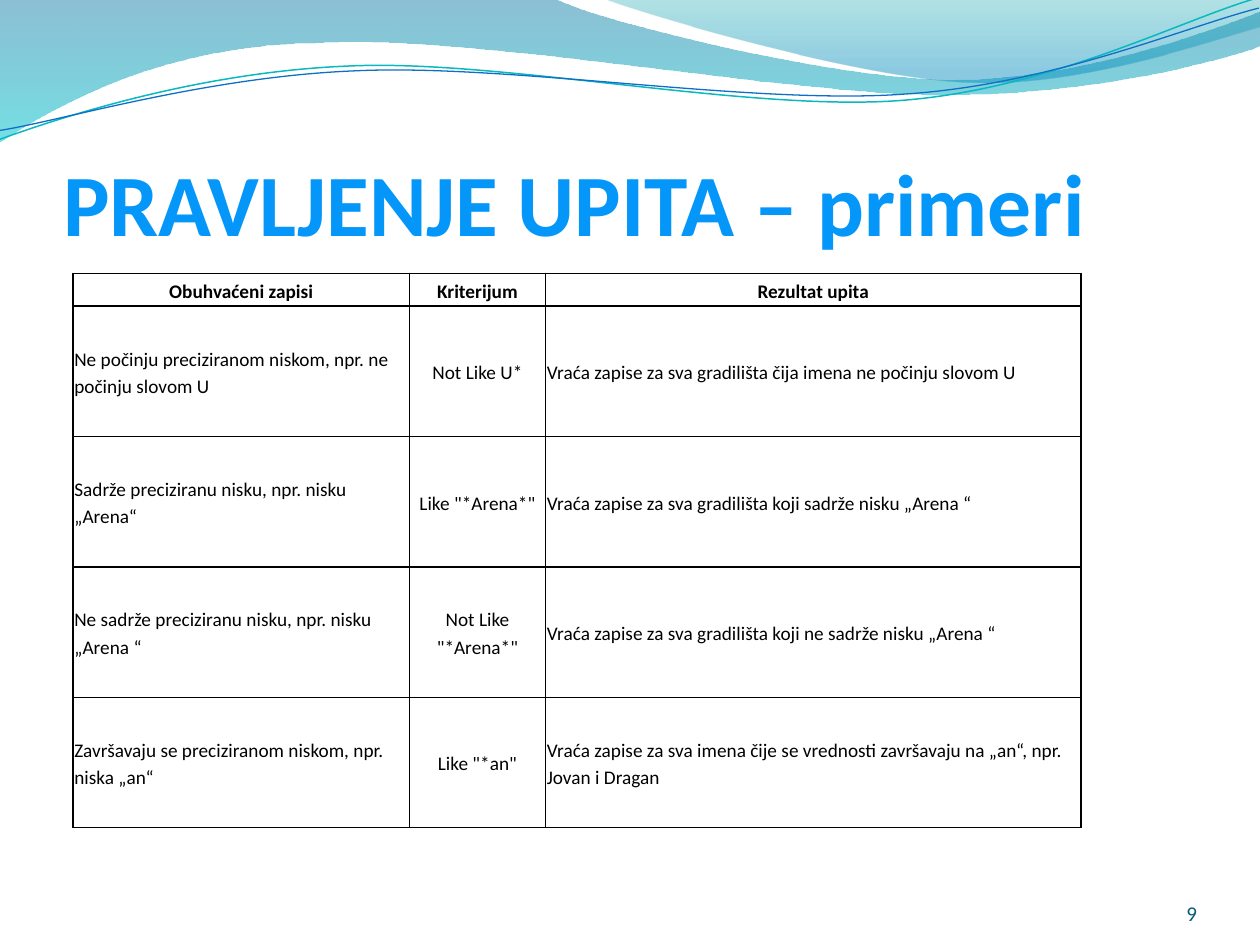
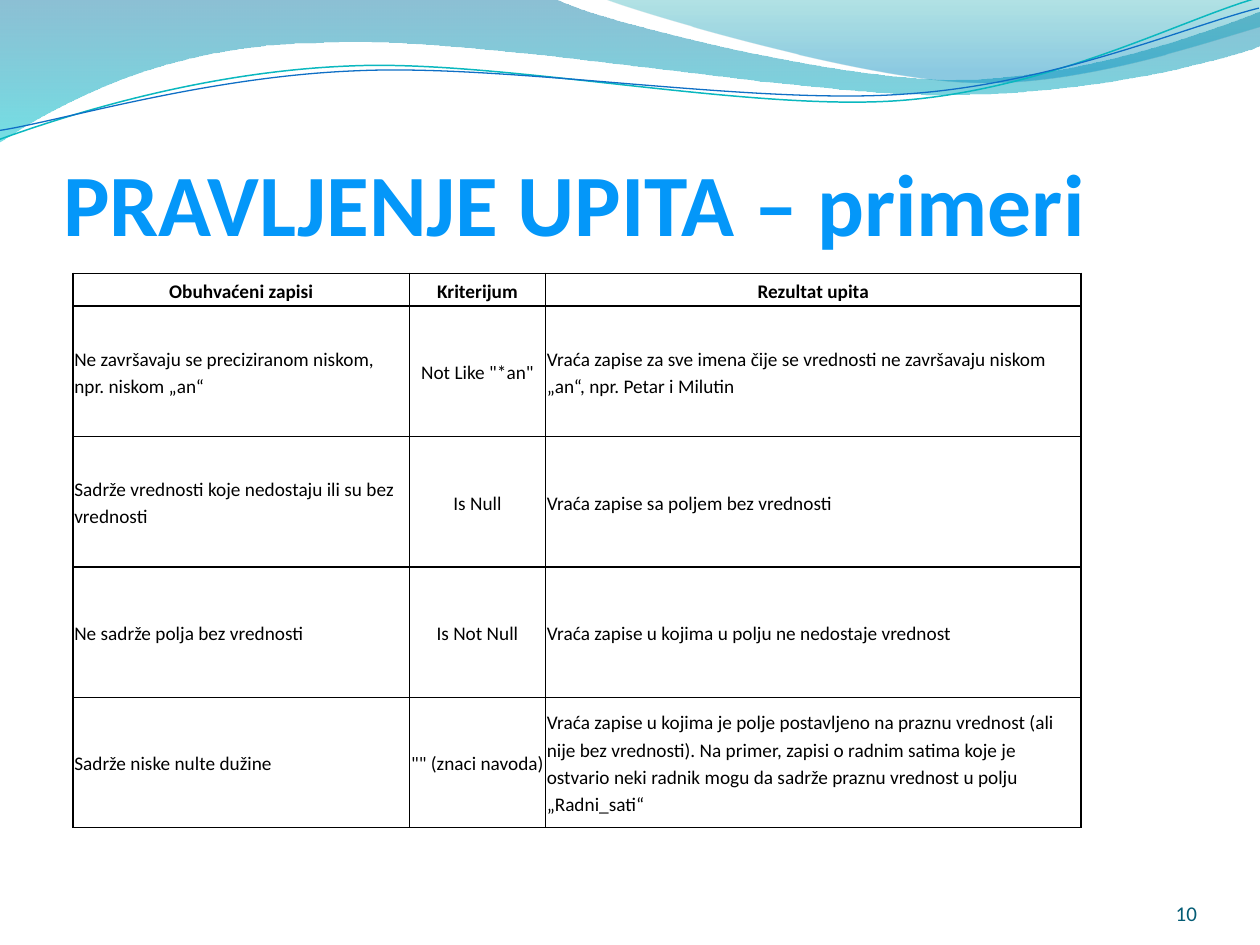
from lxml import etree
from pptx import Presentation
from pptx import util as u
from pptx.dml.color import RGBColor
from pptx.enum import text
from pptx.oxml import ns

PX = 9144  # EMU in one px, 100 px to the inch
FONT = "Calibri"

BLACK = RGBColor(0x00, 0x00, 0x00)
DEEP_BLUE = RGBColor(0x00, 0x74, 0xA1)
TURQUOISE = RGBColor(0x00, 0xC6, 0xCF)
TEAL = RGBColor(0x00, 0xA1, 0xA9)
OCEAN = RGBColor(0x00, 0x8B, 0xBF)
AQUA_LINE = RGBColor(0x0A, 0xB8, 0xBF)
BLUE_LINE = RGBColor(0x0F, 0x6F, 0xC6)
SKY = RGBColor(0x7D, 0xC4, 0xFF)
AZURE = RGBColor(0x04, 0x97, 0xF9)
NUMBER_BLUE = RGBColor(0x04, 0x5C, 0x75)

# Gradient stops: position %, colour, opacity %
TITLE_STOPS = [(0, SKY, 100), (75, AZURE, 100), (100, DEEP_BLUE, 100)]

# Each wave starts at a point; segments hold 1 point (line) or 3 (cubic curve).
FILLED_WAVES = [
    ((0, -1),
     [[(440, -1)],
      [(476, 17), (664, 63), (758, 63)],
      [(853, 63), (958, 26), (1000, 9)],
      [(1001, 36)],
      [(983, 44), (870, 76), (746, 75)],
      [(622, 75), (382, 28), (257, 34)],
      [(129, 35), (46, 83), (-1, 113)]],
     [(0, DEEP_BLUE, 45), (100, TURQUOISE, 55)]),
    ((479, -1),
     [[(509, 11), (682, 62), (769, 65)],
      [(856, 69), (961, 32), (1000, 21)],
      [(1000, 0)]],
     [(0, TEAL, 30), (80, OCEAN, 45)]),
]
LINE_TILT = 357.3
LINE_WAVES = [
    ((-2, 87),
     [[(47, 72), (158, 41), (278, 42)],
      [(396, 42), (591, 93), (712, 90)],
      [(832, 87), (940, 36), (1000, 22)]],
     AQUA_LINE, 0.85),
    ((-2, 80),
     [[(46, 75), (164, 45), (283, 46)],
      [(404, 46), (596, 88), (716, 85)],
      [(835, 83), (942, 42), (1001, 30)]],
     BLUE_LINE, 0.75),
]

TITLE = "PRAVLJENJE UPITA – primeri"
COLUMN_WIDTHS = [267, 108, 425]
TABLE_HEIGHT = 440
HEADER_HEIGHT = 26
HEADER = ("Obuhvaćeni zapisi", "Kriterijum", "Rezultat upita")
CRITERIA_BY_PAGE = {
    9: [
        ("Ne počinju preciziranom niskom, npr. ne počinju slovom U",
         "Not Like U*",
         "Vraća zapise za sva gradilišta čija imena ne počinju slovom U"),
        ("Sadrže preciziranu nisku, npr. nisku „Arena“",
         'Like "*Arena*"',
         "Vraća zapise za sva gradilišta koji sadrže nisku „Arena “"),
        ("Ne sadrže preciziranu nisku, npr. nisku „Arena “",
         'Not Like "*Arena*"',
         "Vraća zapise za sva gradilišta koji ne sadrže nisku „Arena “"),
        ("Završavaju se preciziranom niskom, npr. niska „an“",
         'Like "*an"',
         "Vraća zapise za sva imena čije se vrednosti završavaju na „an“, "
         "npr. Jovan i Dragan"),
    ],
    10: [
        ("Ne završavaju se preciziranom niskom, npr. niskom „an“",
         'Not Like "*an"',
         "Vraća zapise za sve imena čije se vrednosti ne završavaju niskom „an“, "
         "npr. Petar i Milutin"),
        ("Sadrže vrednosti koje nedostaju ili su bez vrednosti",
         "Is Null",
         "Vraća zapise sa poljem bez vrednosti"),
        ("Ne sadrže polja bez vrednosti",
         "Is Not Null",
         "Vraća zapise u kojima u polju ne nedostaje vrednost"),
        ("Sadrže niske nulte dužine",
         '"" (znaci navoda)',
         "Vraća zapise u kojima je polje postavljeno na praznu vrednost "
         "(ali nije bez vrednosti). Na primer, zapisi o radnim satima koje je "
         "ostvario neki radnik mogu da sadrže praznu vrednost u polju „Radni_sati“"),
    ],
}


def px(*lengths):
    return [u.Emu(length * PX) for length in lengths]


def add_child(parent, tag, **attributes):
    return etree.SubElement(parent, ns.qn(tag), attributes)


def fill_gradient(fill, properties, stops):
    """Fill from top to bottom; properties is the XML element that holds the fill."""
    fill.gradient()
    fill.gradient_angle = 270
    stop_list = properties.find(ns.qn("a:gradFill")).find(ns.qn("a:gsLst"))
    for old_stop in list(stop_list):
        stop_list.remove(old_stop)
    for position, color, opacity in stops:
        stop = add_child(stop_list, "a:gs", pos=str(position * 1000))
        tint = add_child(stop, "a:srgbClr", val=str(color))
        if opacity < 100:
            add_child(tint, "a:alpha", val=str(opacity * 1000))


def add_wave(page, start, segments, close):
    """Add the outline as straight pieces, then turn each run of three into a curve."""
    builder = page.shapes.build_freeform(*start, scale=PX)
    builder.add_line_segments([point for segment in segments for point in segment], close=close)
    wave = builder.convert_to_shape()
    wave.shadow.inherit = False
    pieces = iter(list(wave.element.iter(ns.qn("a:lnTo"))))
    for segment in segments:
        corners = [next(pieces) for _ in segment]
        if len(corners) == 3:
            curve = etree.Element(ns.qn("a:cubicBezTo"))
            corners[0].addprevious(curve)
            for corner in corners:
                curve.append(corner[0])
                corner.getparent().remove(corner)
    return wave


def add_waves(page, layout):
    """Draw the waves on a page, then move them behind everything on its layout."""
    waves = []
    for start, segments, stops in FILLED_WAVES:
        wave = add_wave(page, start, segments, close=True)
        fill_gradient(wave.fill, wave.element.spPr, stops)
        wave.line.fill.background()
        waves.append(wave)
    for start, segments, color, width in LINE_WAVES:
        wave = add_wave(page, start, segments, close=False)
        wave.rotation = LINE_TILT
        wave.fill.background()
        wave.line.color.rgb = color
        wave.line.width = u.Pt(width)
        waves.append(wave)
    for index, wave in enumerate(waves):
        wave.element.nvSpPr.cNvPr.set("id", str(100 + index))
        layout.shapes.element.insert(2 + index, wave.element)


def set_insets(holder, left, top, right, bottom):
    holder.margin_left, holder.margin_top, holder.margin_right, holder.margin_bottom = px(
        left, top, right, bottom)


def style_span(span, size, color=None, bold=False):
    span.font.name = FONT
    span.font.size = u.Pt(size)
    span.font.bold = bold
    if color is not None:
        span.font.color.rgb = color


def add_title(page):
    title = page.shapes.title
    title.left, title.top, title.width, title.height = px(50, 77, 900, 125)
    frame = title.text_frame
    frame.text = TITLE
    frame.word_wrap = True
    frame.auto_size = text.MSO_AUTO_SIZE.NONE
    frame.vertical_anchor = text.MSO_ANCHOR.BOTTOM
    set_insets(frame, 0, 5, 0, 0)
    para = frame.paragraphs[0]
    para.alignment = text.PP_ALIGN.LEFT
    span = para.runs[0]
    style_span(span, 50, bold=True)
    fill_gradient(span.font.fill, span.font._element, TITLE_STOPS)


def add_page_number(page, number):
    box = page.shapes.add_textbox(*px(867, 695, 83, 40))
    frame = box.text_frame
    frame.text = str(number)
    frame.word_wrap = True
    frame.vertical_anchor = text.MSO_ANCHOR.BOTTOM
    set_insets(frame, 0, 0, 0, 0)
    para = frame.paragraphs[0]
    para.alignment = text.PP_ALIGN.RIGHT
    style_span(para.runs[0], 12, NUMBER_BLUE)


def add_borders(cell):
    properties = cell._tc.get_or_add_tcPr()
    for index, side in enumerate(("a:lnL", "a:lnR", "a:lnT", "a:lnB")):
        border = etree.Element(ns.qn(side), w=str(u.Pt(1)))
        add_child(add_child(border, "a:solidFill"), "a:srgbClr", val=str(BLACK))
        properties.insert(index, border)


def fill_cell(cell, words, centred, bold):
    cell.text = words
    cell.fill.background()
    cell.vertical_anchor = text.MSO_ANCHOR.MIDDLE
    set_insets(cell, 1, 1, 1, 1)
    add_borders(cell)
    para = cell.text_frame.paragraphs[0]
    para.alignment = text.PP_ALIGN.CENTER if centred else text.PP_ALIGN.LEFT
    para.line_spacing = 1.15
    para.space_after = u.Pt(10)
    style_span(para.runs[0], 11, BLACK, bold)


def add_criteria_table(page, criteria):
    rows = [HEADER, *criteria]
    body_height = (TABLE_HEIGHT - HEADER_HEIGHT) / len(criteria)
    row_heights = [HEADER_HEIGHT] + [body_height] * len(criteria)
    frame = page.shapes.add_table(len(rows), len(HEADER),
                                  *px(58, 217, sum(COLUMN_WIDTHS), TABLE_HEIGHT))
    table = frame.table
    table.first_row = table.horz_banding = False
    for column, width in zip(table.columns, px(*COLUMN_WIDTHS)):
        column.width = width
    for row, height in zip(table.rows, px(*row_heights)):
        row.height = height
    for r, row_words in enumerate(rows):
        for c, words in enumerate(row_words):
            fill_cell(table.cell(r, c), words, centred=r == 0 or c == 1, bold=r == 0)


def main():
    deck = Presentation()
    deck.slide_width, deck.slide_height = px(1000, 750)
    layout = deck.slide_layouts.get_by_name("Title Only")
    for number, criteria in CRITERIA_BY_PAGE.items():
        page = deck.slides.add_slide(layout)
        add_title(page)
        add_page_number(page, number)
        add_criteria_table(page, criteria)
    add_waves(deck.slides[0], layout)
    deck.save("out.pptx")


if __name__ == "__main__":
    main()
